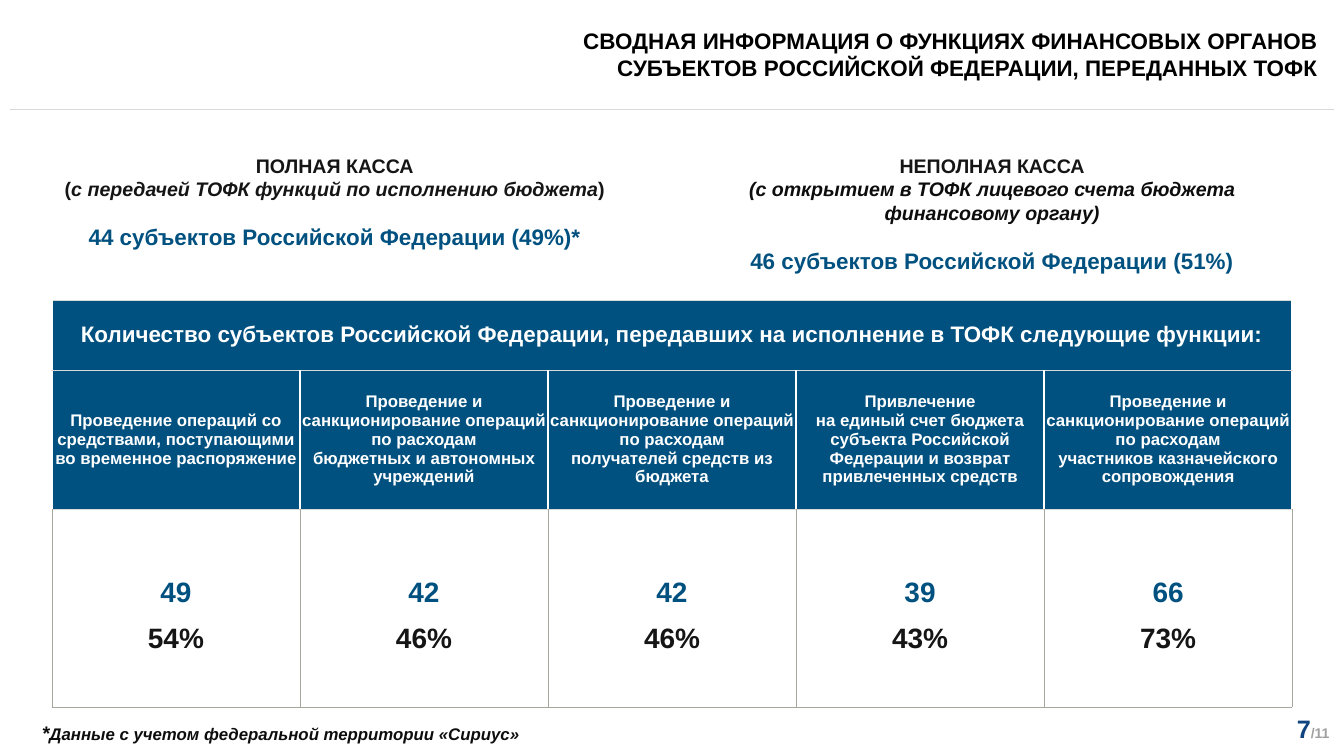
from pptx import Presentation
from pptx.dml.color import RGBColor
from pptx.enum.shapes import MSO_CONNECTOR as Connector
from pptx.enum.text import MSO_ANCHOR as Anchor, MSO_AUTO_SIZE as AutoSize, PP_ALIGN as Align
from pptx.oxml.ns import qn
from pptx.util import Inches, Pt
from lxml.etree import SubElement

WIDTH, HEIGHT = 26.67, 15
FONT = "Arial"
COLORS = {
    "black": "000000", "white": "FFFFFF", "ink": "151515", "note": "0D0D0D",
    "blue": "005180", "number": "11437F", "muted": "A0A0A0",
    "rule": "D9D9D9", "border": "A7A69B",
}
FUNCTIONS = [
    (["Проведение операций со средствами, поступающими во временное распоряжение"], "49", "54%"),
    (["Проведение и санкционирование операций по расходам",
      "бюджетных и автономных учреждений"], "42", "46%"),
    (["Проведение и санкционирование операций по расходам",
      "получателей средств из бюджета"], "42", "46%"),
    (["Привлечение", "на единый счет бюджета субъекта Российской Федерации "
      "и возврат привлеченных средств"], "39", "43%"),
    (["Проведение и санкционирование операций по расходам",
      "участников казначейского сопровождения"], "66", "73%"),
]


def across(share):
    return Inches(WIDTH * share / 100)


def down(share):
    return Inches(HEIGHT * share / 100)


def color(name):
    return RGBColor.from_string(COLORS[name])


def span(text, size, tint, italic=False):
    return text, size, tint, italic


def fill_text(frame, paras, align, spacing=None, gap_before_last=0):
    for index, spans in enumerate(paras):
        para = frame.paragraphs[0] if index == 0 else frame.add_paragraph()
        para.alignment = align
        if spacing:
            para.line_spacing = spacing
        if gap_before_last and index == len(paras) - 1:
            para.space_before = Pt(gap_before_last)
        for text, size, tint, italic in spans:
            for number, line in enumerate(text.split("\n")):
                if number:
                    para.add_line_break()
                run = para.add_run()
                run.text = line
                font = run.font
                font.name, font.size = FONT, Pt(size)
                font.bold, font.italic = True, italic
                font.color.rgb = color(tint)


def set_margins(target, left, top, right, bottom):
    target.margin_left, target.margin_top = Inches(left), Inches(top)
    target.margin_right, target.margin_bottom = Inches(right), Inches(bottom)


def add_text(page, area, paras, align, margins=(0.1, 0.05, 0.1, 0.05),
             anchor=Anchor.TOP, wrap=True, grow=True, gap_before_last=0):
    left, top, width, height = area
    box = page.shapes.add_textbox(across(left), down(top), across(width), down(height))
    frame = box.text_frame
    frame.word_wrap = wrap
    frame.auto_size = AutoSize.SHAPE_TO_FIT_TEXT if grow else AutoSize.NONE
    frame.vertical_anchor = anchor
    set_margins(frame, *margins)
    fill_text(frame, paras, align, gap_before_last=gap_before_last)


def add_rule(page, left, right, top):
    rule = page.shapes.add_connector(Connector.STRAIGHT, across(left), down(top),
                                     across(right), down(top))
    rule.line.color.rgb = color("rule")
    rule.line.width = Pt(1)
    SubElement(rule.element.spPr, qn("a:effectLst"))


def set_borders(cell, **sides):
    properties = cell._tc.get_or_add_tcPr()
    for side in "LRTB":
        tint, width = sides[side]
        line = SubElement(properties, qn(f"a:ln{side}"), w=str(Pt(width)))
        solid = SubElement(line, qn("a:solidFill"))
        SubElement(solid, qn("a:srgbClr"), val=COLORS[tint])


def format_header(cell):
    thick, thin = ("white", 2.25), ("rule", 0.25)
    set_borders(cell, L=thick, R=thick, T=thin, B=thin)
    cell.fill.solid()
    cell.fill.fore_color.rgb = color("blue")
    set_margins(cell, 0.01, 0, 0.01, 0)
    cell.vertical_anchor = Anchor.MIDDLE


def format_value(cell):
    edge = ("border", 1)
    set_borders(cell, L=edge, R=edge, T=("rule", 0.25), B=edge)
    cell.fill.background()
    set_margins(cell, 0.13, 0.06, 0.13, 0.06)
    cell.vertical_anchor = Anchor.MIDDLE


def add_functions_table(page):
    heights = [9.2, 18.4, 26.2]
    count = len(FUNCTIONS)
    table = page.shapes.add_table(len(heights), count, across(3.86), down(39.73),
                                  across(92.28), down(sum(heights))).table
    table.first_row = table.horz_banding = False
    for row, height in zip(table.rows, heights):
        row.height = down(height)
    for index, (title, total, percent) in enumerate(FUNCTIONS):
        heading, name, value = (table.cell(row, index) for row in range(3))
        format_header(heading)
        format_header(name)
        format_value(value)
        fill_text(name.text_frame, [[span(line, 24, "white")] for line in title], Align.CENTER)
        fill_text(value.text_frame, [[span(total, 40, "blue")], [span(percent, 40, "ink")]],
                  Align.CENTER, spacing=1.5)
    table.cell(0, 0).merge(table.cell(0, count - 1))
    fill_text(table.cell(0, 0).text_frame, [[span(
        "Количество субъектов Российской Федерации, передавших на исполнение "
        "в ТОФК следующие функции:", 32, "white")]], Align.CENTER)


def add_summary(page, area, title, description, total):
    paras = [[span(title, 28, "ink")], description, [span(total, 32, "blue")]]
    add_text(page, area, paras, Align.CENTER, margins=(0.2, 0.1, 0.2, 0.1), gap_before_last=32)


def main():
    deck = Presentation()
    deck.slide_width, deck.slide_height = Inches(WIDTH), Inches(HEIGHT)
    page = deck.slides.add_slide(deck.slide_layouts[6])
    add_rule(page, 0.75, 99.25, 14.47)
    add_text(page, (92.2, 94, 7.09, 4.73),
             [[span("7", 36, "number"), span("/11", 20, "muted")]], Align.RIGHT)
    add_functions_table(page)
    add_summary(page, (49.83, 19.67, 47.96, 17.53), "НЕПОЛНАЯ КАССА",
                [span("(с открытием в ТОФК лицевого счета бюджета финансовому органу)",
                      28, "note", True)],
                "46 субъектов Российской Федерации (51%)")
    add_summary(page, (2.74, 19.67, 44.32, 14.33), "ПОЛНАЯ КАССА",
                [span("(", 28, "ink"),
                 span("с передачей ТОФК функций по исполнению бюджета", 28, "ink", True),
                 span(")", 28, "ink")],
                "44 субъектов Российской Федерации (49%)*")
    add_text(page, (2.74, 95, 36.63, 3.8),
             [[span("*", 28, "note", True),
               span("Данные с учетом федеральной территории «Сириус»", 24, "note", True)]],
             Align.LEFT, wrap=False)
    add_text(page, (0, 0, 100, 14.27),
             [[span("СВОДНАЯ ИНФОРМАЦИЯ О ФУНКЦИЯХ ФИНАНСОВЫХ ОРГАНОВ\n"
                    "СУБЪЕКТОВ РОССИЙСКОЙ ФЕДЕРАЦИИ, ПЕРЕДАННЫХ ТОФК", 32, "black")]],
             Align.RIGHT, margins=(0, 0, 0.52, 0), anchor=Anchor.MIDDLE, grow=False)
    deck.save("out.pptx")


if __name__ == "__main__":
    main()
